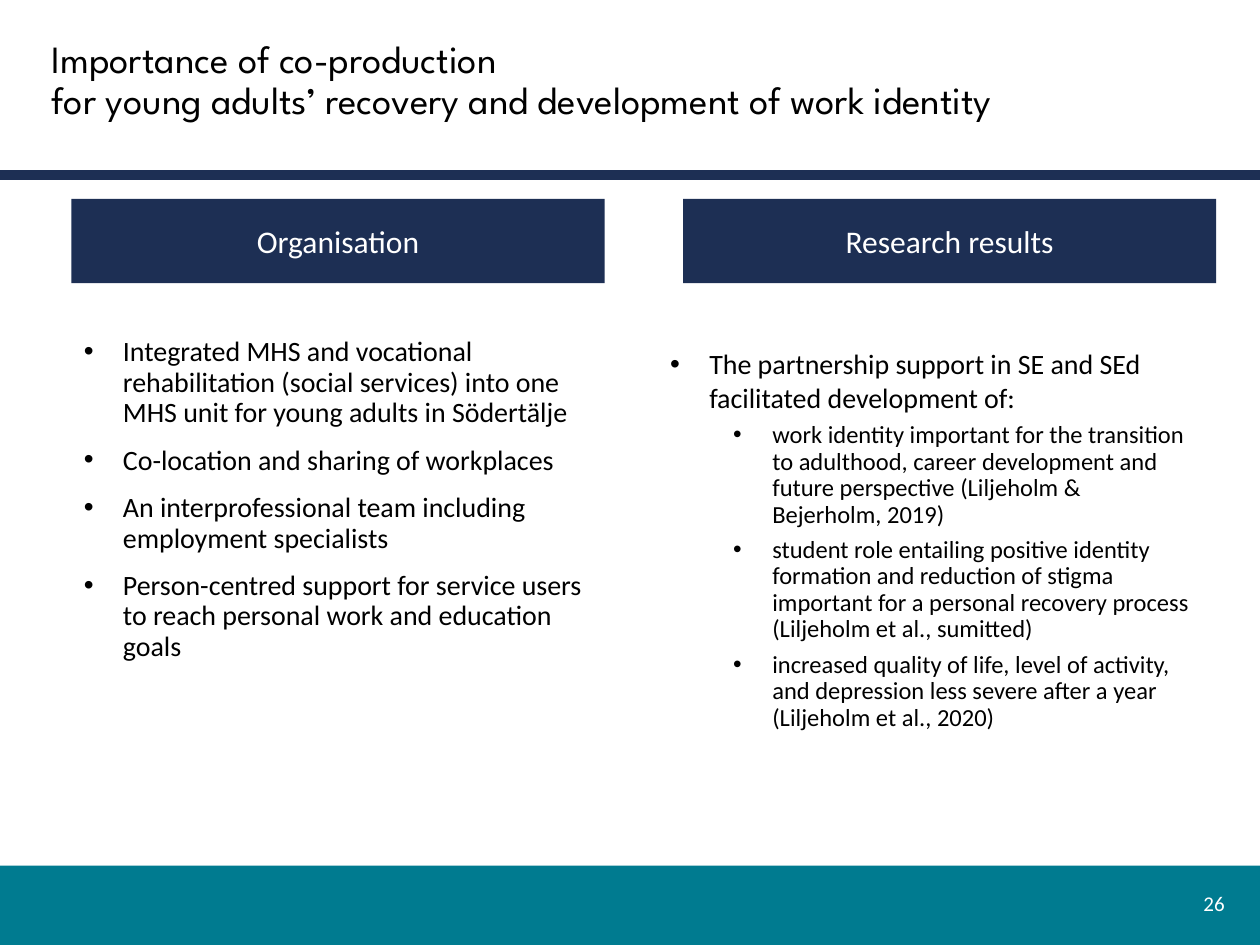
from dataclasses import dataclass

from lxml import etree
from pptx import Presentation
from pptx import util as u
from pptx.dml.color import RGBColor
from pptx.enum import shapes, text
from pptx.oxml import ns

NAVY, TEAL, BLACK, WHITE = "1D2F54", "007B90", "000000", "FFFFFF"
BODY_FONT, TITLE_FONT = "Calibri", "League Spartan"
INDENT = u.Cm(0.79)


@dataclass
class Box:
    left: float
    top: float
    width: float
    height: float

    def lengths(self) -> list[u.Cm]:
        return [u.Cm(v) for v in (self.left, self.top, self.width, self.height)]


@dataclass
class Bullet:
    words: str
    size: int = 16
    level: int = 0
    before: int = 10
    spacing: float = 0.9


@dataclass
class Column:
    heading: str
    heading_left: float
    body: Box
    top_inset: float
    bullets: list[Bullet]


def color(value: str) -> RGBColor:
    return RGBColor.from_string(value)


def add_run(paragraph, words: str, size: int, ink: str, font: str = BODY_FONT) -> None:
    run = paragraph.add_run()
    run.text = words
    run.font.size = u.Pt(size)
    run.font.name = font
    run.font.color.rgb = color(ink)


def add_bar(slide, box: Box, fill: str):
    bar = slide.shapes.add_shape(shapes.MSO_SHAPE.RECTANGLE, *box.lengths())
    bar.shadow.inherit = False
    bar.fill.solid()
    bar.fill.fore_color.rgb = color(fill)
    bar.line.fill.background()
    return bar


def add_frame(slide, box: Box, anchor=text.MSO_ANCHOR.TOP):
    frame = slide.shapes.add_textbox(*box.lengths()).text_frame
    frame.word_wrap = True
    frame.vertical_anchor = anchor
    return frame


def add_rule(slide, left: float, right: float, y: float) -> None:
    rule = slide.shapes.add_connector(
        shapes.MSO_CONNECTOR.STRAIGHT, u.Cm(left), u.Cm(y), u.Cm(right), u.Cm(y))
    rule.line.color.rgb = color(NAVY)
    rule.line.width = u.Pt(6)
    etree.SubElement(rule._element.spPr, ns.qn("a:effectLst"))


def add_bullet(paragraph, bullet: Bullet) -> None:
    paragraph.level = bullet.level
    paragraph.line_spacing = bullet.spacing
    paragraph.space_before = u.Pt(bullet.before)
    properties = paragraph._p.get_or_add_pPr()
    properties.set("marL", str(INDENT + bullet.level * u.Cm(1.27)))
    properties.set("indent", str(-INDENT))
    etree.SubElement(properties, ns.qn("a:buFont"), typeface="Arial")
    etree.SubElement(properties, ns.qn("a:buChar"), char="•")
    add_run(paragraph, bullet.words, bullet.size, BLACK)


def add_column(slide, column: Column) -> None:
    heading = add_bar(slide, Box(column.heading_left, 4.01, 10.75, 1.7), NAVY).text_frame
    heading.vertical_anchor = text.MSO_ANCHOR.MIDDLE
    heading.paragraphs[0].alignment = text.PP_ALIGN.CENTER
    add_run(heading.paragraphs[0], column.heading, 18, WHITE)

    body = add_frame(slide, column.body)
    body.margin_top = u.Cm(column.top_inset)
    for i, bullet in enumerate(column.bullets):
        add_bullet(body.add_paragraph() if i else body.paragraphs[0], bullet)


def finding(words: str) -> Bullet:
    return Bullet(words, size=14, level=1, before=5)


COLUMNS = [
    Column("Organisation", 1.44, Box(1.44, 5.71, 11.02, 8.79), 1.1, [
        Bullet("Integrated MHS and vocational rehabilitation (social services) "
               "into one MHS unit for young adults in Södertälje"),
        Bullet("Co-location and sharing of workplaces"),
        Bullet("An interprofessional team including employment specialists"),
        Bullet("Person-centred support for service users to reach personal work "
               "and education goals"),
    ]),
    Column("Research results", 13.77, Box(13.26, 5.66, 11.02, 11.63), 1.33, [
        Bullet("The partnership support in SE and SEd facilitated development of:",
               before=0, spacing=1.0),
        finding("work identity important for the transition to adulthood, career "
                "development and future perspective (Liljeholm & Bejerholm, 2019)"),
        finding("student role entailing positive identity formation and reduction of "
                "stigma important for a personal recovery process "
                "(Liljeholm et al., sumitted)"),
        finding("increased quality of life, level of activity, and depression less "
                "severe after a year (Liljeholm et al., 2020)"),
    ]),
]


def main() -> None:
    deck = Presentation()
    deck.slide_width, deck.slide_height = u.Cm(25.4), u.Cm(19.05)
    slide = deck.slides.add_slide(deck.slide_layouts[6])

    # Footer band and header rule
    add_bar(slide, Box(0, 17.45, 25.4, 1.6), TEAL)
    add_rule(slide, 25.81, -1.5, 3.53)

    # Title
    title = add_frame(slide, Box(0.79, 0.58, 23.88, 2.13), text.MSO_ANCHOR.MIDDLE).paragraphs[0]
    title.line_spacing = 0.9
    add_run(title, "Importance of co-production ", 22, BLACK, TITLE_FONT)
    title.add_line_break()
    add_run(title, "for young adults’ recovery and development of work identity",
            22, BLACK, TITLE_FONT)

    # Page number
    number = add_frame(slide, Box(23.85, 17.7, 1.09, 1.02), text.MSO_ANCHOR.MIDDLE).paragraphs[0]
    number.alignment = text.PP_ALIGN.RIGHT
    add_run(number, "26", 12, WHITE)

    # Headed columns
    for column in COLUMNS:
        add_column(slide, column)

    deck.save("out.pptx")


if __name__ == "__main__":
    main()
